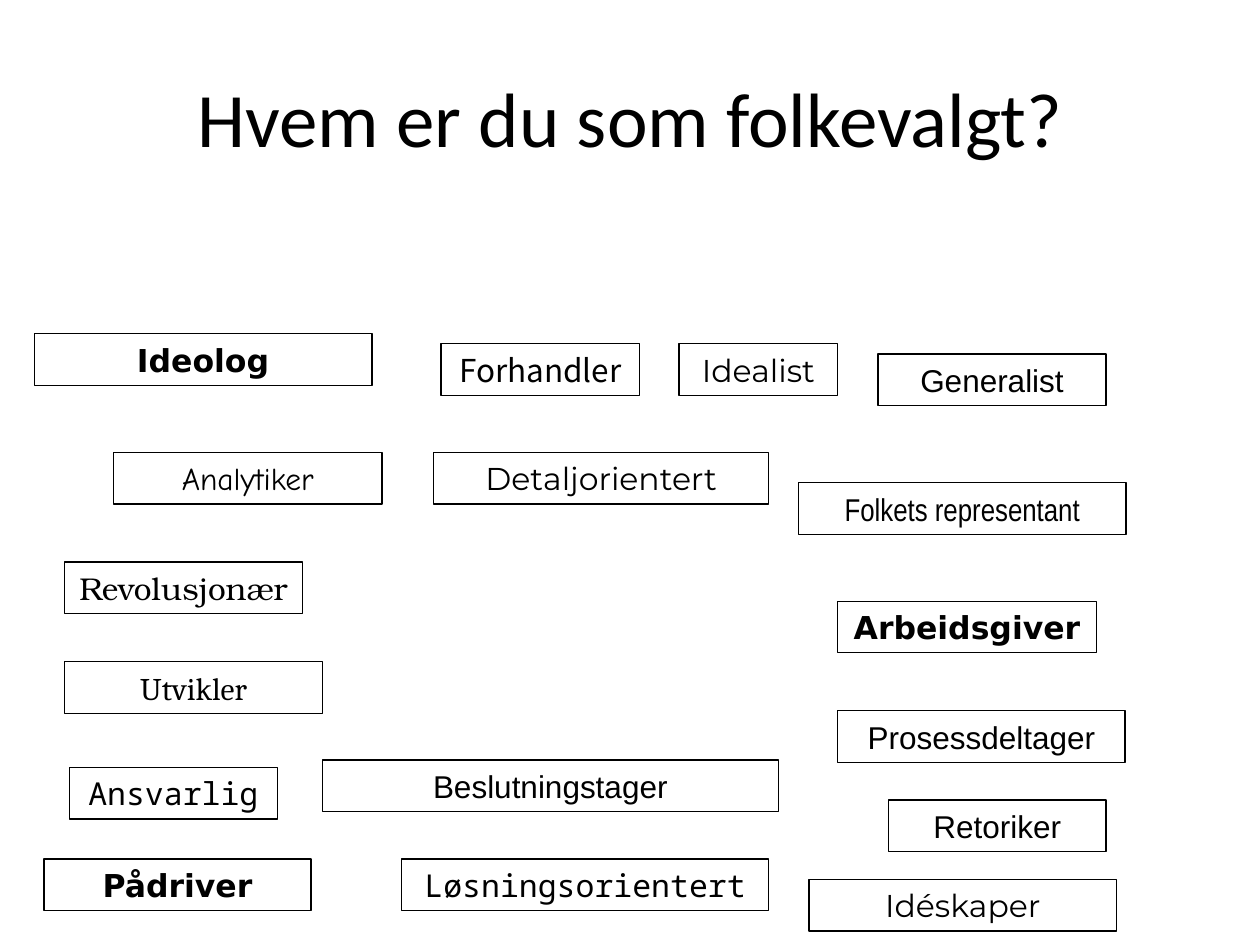
import pptx
import pptx.util
import pptx.dml.color
import pptx.enum.text

Cm, Pt = pptx.util.Cm, pptx.util.Pt
BLACK = pptx.dml.color.RGBColor(0, 0, 0)
CENTER = pptx.enum.text.PP_ALIGN.CENTER
MIDDLE = pptx.enum.text.MSO_ANCHOR.MIDDLE
HEIGHT = Cm(1.04)

# word, font, left, top, width (cm)
ROLES = [
    ("Ideolog", "DejaVu Sans", 0.69, 6.73, 6.81),
    ("Forhandler", "Noto Sans CJK KR", 8.89, 6.93, 4.01),
    ("Idealist", "Montserrat", 13.69, 6.93, 3.2),
    ("Revolusjonær", "TeX Gyre Bonum", 1.3, 11.33, 4.8),
    ("Analytiker", "Comic Neue", 2.29, 9.12, 5.41),
    ("Folkets representant", "Arial Narrow", 16.1, 9.73, 6.6),
    ("Generalist", "Arial", 17.7, 7.14, 4.6),
    ("Utvikler", "Cambria", 1.3, 13.34, 5.21),
    ("Ansvarlig", "Noto Sans Mono", 1.4, 15.47, 4.19),
    ("Retoriker", "Arial", 17.91, 16.13, 4.39),
    ("Arbeidsgiver", "DejaVu Sans", 16.89, 12.12, 5.21),
    ("Beslutningstager", "Arial", 6.5, 15.32, 9.19),
    ("Prosessdeltager", "Arial", 16.89, 14.33, 5.79),
    ("Detaljorientert", "Montserrat", 8.74, 9.12, 6.76),
    ("Løsningsorientert", "Noto Sans Mono", 8.1, 17.32, 7.39),
    ("Pådriver", "DejaVu Sans", 0.89, 17.32, 5.38),
    ("Idéskaper", "Montserrat", 16.31, 17.73, 6.2),
]


def write(frame, text, face, size, bold=False):
    """Put one centred line of text in the frame."""
    frame.vertical_anchor = MIDDLE
    line = frame.paragraphs[0]
    line.text = text
    line.alignment = CENTER
    font = line.font
    font.name, font.size, font.bold = face, Pt(size), bold
    font.color.rgb = BLACK


deck = pptx.Presentation()
deck.slide_width, deck.slide_height = Cm(25.4), Cm(19.05)
slide = deck.slides.add_slide(deck.slide_layouts[5])

title = slide.shapes.title
title.left, title.top = Cm(1.27), Cm(0.76)
title.width, title.height = Cm(22.86), Cm(3.18)
write(title.text_frame, "Hvem er du som folkevalgt?", "Calibri", 44)

for word, face, left, top, width in ROLES:
    box = slide.shapes.add_textbox(Cm(left), Cm(top), Cm(width), HEIGHT)
    box.line.color.rgb = BLACK
    box.line.width = Pt(0.75)
    box.text_frame.word_wrap = True
    write(box.text_frame, word, face, 18, bold=face == "DejaVu Sans")

deck.save("out.pptx")
